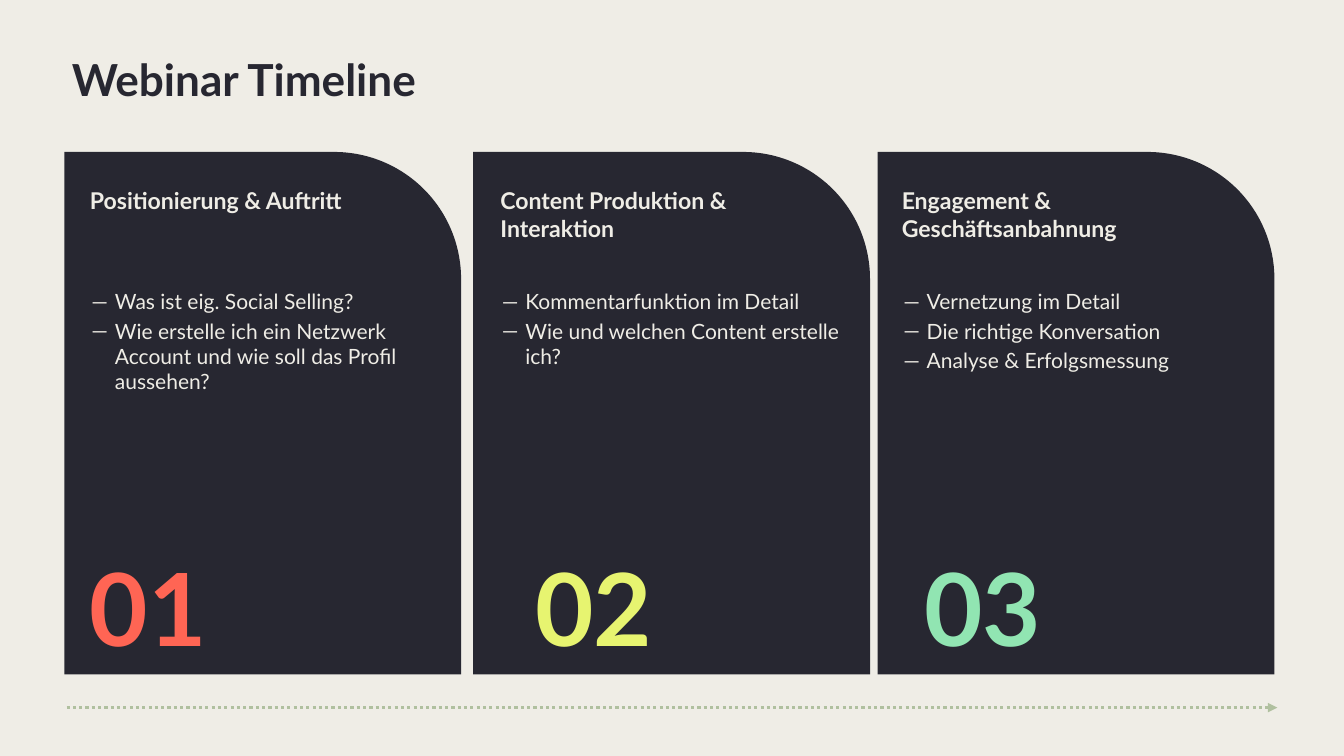
from lxml import etree
from pptx import Presentation
from pptx import util as u
from pptx.dml.color import RGBColor
from pptx.enum import dml, shapes, text
from pptx.oxml.ns import qn

WIDTH, HEIGHT = 17.78, 10
DARK, LIGHT, SAGE = "272731", "EFEDE6", "B0C09F"
FONT = "Lato"
TITLE = "Webinar Timeline"
SESSIONS = [
    {"heading": "Positionierung & Auftritt",
     "topics": ["Was ist eig. Social Selling?",
                "Wie erstelle ich ein Netzwerk Account und wie soll das Profil aussehen?"],
     "number": "01", "accent": "FF6554",
     "left": 0.85, "text_left": 1.19, "number_left": 1.19, "topics_width": 4.33},
    {"heading": "Content Produktion & Interaktion",
     "topics": ["Kommentarfunktion im Detail",
                "Wie und welchen Content erstelle ich?"],
     "number": "02", "accent": "E7F470",
     "left": 6.26, "text_left": 6.62, "number_left": 7.08, "topics_width": 4.49},
    {"heading": "Engagement &\nGeschäftsanbahnung",
     "topics": ["Vernetzung im Detail", "Die richtige Konversation",
                "Analyse & Erfolgsmessung"],
     "number": "03", "accent": "91E5B2",
     "left": 11.61, "text_left": 11.93, "number_left": 12.23, "topics_width": 4.49},
]
CARD_TOP, CARD_WIDTH, CARD_HEIGHT = 2.01, 5.25, 6.91
HEADING_ROW, TOPICS_ROW, NUMBER_ROW = (2.47, 0.92), (3.82, 1.4), (7.22, 1.62)
HEADING_WIDTH, NUMBER_WIDTH = 4.3, 2.53
ARROW_LEFT, ARROW_RIGHT, ARROW_Y = 0.88, 16.9, 9.36


def rgb(color):
    return RGBColor.from_string(color)


def inches(*lengths):
    return [u.Inches(length) for length in lengths]


def add_bullet(paragraph):
    props = paragraph._p.get_or_add_pPr()
    props.set("marL", str(u.Inches(0.33)))
    props.set("indent", str(u.Inches(-0.31)))
    color = etree.SubElement(props, qn("a:buClr"))
    etree.SubElement(color, qn("a:srgbClr"), val=LIGHT)
    etree.SubElement(props, qn("a:buFont"), typeface=FONT)
    etree.SubElement(props, qn("a:buChar"), char="—")


def write(shape, box, lines, size, color, bold, inset=0, bullets=False):
    shape.left, shape.top, shape.width, shape.height = inches(*box)
    frame = shape.text_frame
    frame.word_wrap = True
    frame.auto_size = text.MSO_AUTO_SIZE.NONE
    frame.vertical_anchor = text.MSO_ANCHOR.TOP
    frame.margin_left = frame.margin_top = u.Inches(inset)
    frame.margin_right = frame.margin_bottom = u.Inches(inset)
    for i, line in enumerate(lines):
        paragraph = frame.add_paragraph() if i else frame.paragraphs[0]
        paragraph.text = line
        paragraph.alignment = text.PP_ALIGN.LEFT
        paragraph.space_before = u.Pt(4 if i else 0)
        if bullets:
            add_bullet(paragraph)
        font = paragraph.font
        font.name, font.size, font.bold = FONT, u.Pt(size), bold
        font.color.rgb = rgb(color)


def add_card(slide, left):
    card = slide.shapes.add_shape(
        shapes.MSO_SHAPE.ROUND_1_RECTANGLE,
        *inches(left, CARD_TOP, CARD_WIDTH, CARD_HEIGHT))
    card.adjustments[0] = 0.32
    card.shadow.inherit = False
    card.fill.solid()
    card.fill.fore_color.rgb = rgb(DARK)
    card.line.fill.background()
    slide.shapes._spTree.insert(2, card._element)


def add_timeline(slide):
    timeline = slide.shapes.add_connector(
        shapes.MSO_CONNECTOR.STRAIGHT,
        *inches(ARROW_LEFT, ARROW_Y, ARROW_RIGHT, ARROW_Y))
    timeline.line.color.rgb = rgb(SAGE)
    timeline.line.width = u.Pt(3)
    timeline.line.dash_style = dml.MSO_LINE.ROUND_DOT
    etree.SubElement(timeline.line._get_or_add_ln(), qn("a:tailEnd"), type="triangle")
    etree.SubElement(timeline._element.spPr, qn("a:effectLst"))


def main():
    deck = Presentation()
    deck.slide_width, deck.slide_height = inches(WIDTH, HEIGHT)
    slide = deck.slides.add_slide(deck.slide_layouts.get_by_name("Comparison"))
    slide.background.fill.solid()
    slide.background.fill.fore_color.rgb = rgb(LIGHT)
    title, *bodies = slide.placeholders
    write(title, (0.86, 0.6, 15.08, 0.89), [TITLE], 42, DARK, True, inset=0.09)

    for session, topics in zip(SESSIONS, bodies):
        add_card(slide, session["left"])
        top, height = TOPICS_ROW
        write(topics, (session["text_left"], top, session["topics_width"], height),
              session["topics"], 20, LIGHT, False, bullets=True)
        for key, left, width, row, size, color in (
            ("heading", session["text_left"], HEADING_WIDTH, HEADING_ROW, 22, LIGHT),
            ("number", session["number_left"], NUMBER_WIDTH, NUMBER_ROW, 96, session["accent"]),
        ):
            label = slide.shapes.add_textbox(0, 0, 0, 0)
            write(label, (left, row[0], width, row[1]), [session[key]], size, color, True)

    for spare in bodies[len(SESSIONS):]:
        spare._element.getparent().remove(spare._element)
    add_timeline(slide)
    deck.save("out.pptx")


if __name__ == "__main__":
    main()
